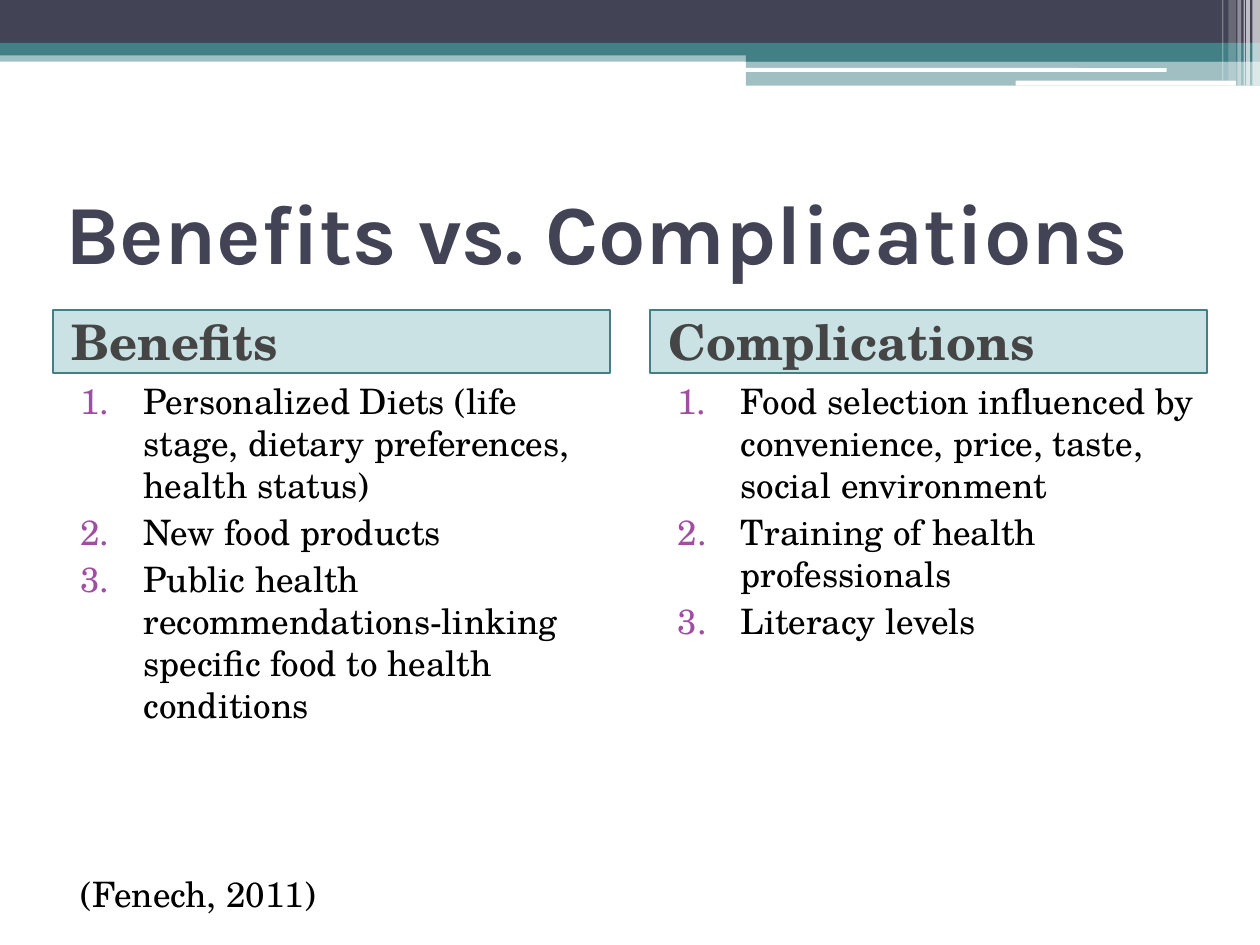
from typing import NamedTuple

from lxml.etree import SubElement
from pptx import Presentation
from pptx.dml.color import RGBColor
from pptx.enum.shapes import MSO_SHAPE
from pptx.enum.text import MSO_ANCHOR
from pptx.oxml.ns import qn
from pptx.util import Inches, Pt

COLORS = {
    "navy": "424456",
    "teal": "438086",
    "heading fill": "328E97",
    "heading text": "454545",
    "number": "A04DA3",
    "white": "FFFFFF",
    "black": "000000",
}
TITLE_FONT = "Karla"
BODY_FONT = "TeX Gyre Schola"
COLUMN_WIDTH = 4.42


class Band(NamedTuple):
    left: float
    top: float
    width: float
    height: float
    color: str
    opacity: int = 100
    rounded: bool = False


class Column(NamedTuple):
    left: float
    heading: str
    items: list[str]
    citation: str = ""


BANDS = [
    Band(0, 0.4, 10, 0.09, "teal", 50),
    Band(0, 0, 10, 0.34, "navy"),
    Band(0, 0.34, 10, 0.1, "teal"),
    Band(5.92, 0.39, 4.08, 0.1, "teal"),
    Band(5.92, 0.48, 4.08, 0.2, "teal", 50),
    Band(5.91, 0.54, 3.35, 0.03, "white", rounded=True),
    Band(8.06, 0.64, 1.75, 0.04, "white", rounded=True),
    Band(9.94, 0, 0.06, 0.68, "white", 65),
    Band(9.89, 0, 0.03, 0.68, "white", 65),
    Band(9.87, 0, 0.01, 0.68, "white", 60),
    Band(9.82, 0, 0.03, 0.68, "white", 40),
    Band(9.75, 0, 0.06, 0.64, "white", 20),
    Band(9.7, 0, 0.01, 0.64, "white", 30),
]

COLUMNS = [
    Column(
        0.42,
        "Benefits",
        [
            "Personalized Diets (life stage, dietary preferences, health status)",
            "New food products",
            "Public health recommendations-linking specific food to health conditions",
        ],
        "(Fenech, 2011)",
    ),
    Column(
        5.16,
        "Complications",
        [
            "Food selection influenced by convenience, price, taste, social environment",
            "Training of health professionals",
            "Literacy levels",
        ],
    ),
]


def rgb(name: str) -> RGBColor:
    return RGBColor.from_string(COLORS[name])


def draw_band(page, band: Band):
    kind = MSO_SHAPE.ROUNDED_RECTANGLE if band.rounded else MSO_SHAPE.RECTANGLE
    shape = page.shapes.add_shape(
        kind, Inches(band.left), Inches(band.top), Inches(band.width), Inches(band.height)
    )
    shape.shadow.inherit = False
    shape.line.fill.background()
    shape.fill.solid()
    shape.fill.fore_color.rgb = rgb(band.color)
    if band.opacity < 100:
        color = shape.fill._xPr.find(qn("a:solidFill"))[0]
        SubElement(color, qn("a:alpha"), val=str(band.opacity * 1000))
    return shape


def add_box(page, left: float, top: float, width: float, height: float):
    box = page.shapes.add_textbox(Inches(left), Inches(top), Inches(width), Inches(height))
    box.text_frame.word_wrap = True
    return box.text_frame


def add_span(para, text: str, font: str, size: int, color: str, bold: bool = False) -> None:
    span = para.add_run()
    span.text = text
    span.font.name = font
    span.font.size = Pt(size)
    span.font.bold = bold
    span.font.color.rgb = rgb(color)


def set_indent(para, margin: float, indent: float = 0):
    properties = para._p.get_or_add_pPr()
    properties.set("marL", str(Inches(margin)))
    properties.set("indent", str(Inches(indent)))
    properties.set("algn", "l")
    return properties


def number_paragraph(para) -> None:
    properties = set_indent(para, 0.62, -0.5)
    color = SubElement(properties, qn("a:buClr"))
    SubElement(color, qn("a:srgbClr"), val=COLORS["number"])
    SubElement(properties, qn("a:buFont"), typeface="+mj-lt")
    SubElement(properties, qn("a:buAutoNum"), type="arabicPeriod")


def draw_heading(page, column: Column) -> None:
    heading = draw_band(page, Band(column.left, 2.46, COLUMN_WIDTH, 0.5, "heading fill", 25))
    heading.line.color.rgb = rgb("teal")
    heading.line.width = Pt(1)
    frame = heading.text_frame
    frame.word_wrap = True
    frame.vertical_anchor = MSO_ANCHOR.MIDDLE
    para = frame.paragraphs[0]
    para.space_before = Pt(3)
    set_indent(para, 0.05)
    add_span(para, column.heading, BODY_FONT, 28, "heading text", bold=True)


def draw_list(page, column: Column) -> None:
    frame = add_box(page, column.left, 2.96, COLUMN_WIDTH, 4.25)
    for index, item in enumerate(column.items):
        para = frame.add_paragraph() if index else frame.paragraphs[0]
        para.space_before = Pt(3)
        number_paragraph(para)
        add_span(para, item, BODY_FONT, 20, "black")
    if column.citation:
        para = frame.add_paragraph()
        para.space_before = Pt(84)
        set_indent(para, 0.62, -0.5)
        add_span(para, column.citation, BODY_FONT, 20, "black")


def main() -> None:
    deck = Presentation()
    deck.slide_width = Inches(10)
    deck.slide_height = Inches(7.5)
    page = deck.slides.add_slide(deck.slide_layouts[6])
    for band in BANDS:
        shape = draw_band(page, band)
        if band.rounded:
            shape.adjustments[0] = 0.17
    title = add_box(page, 0.42, 1.25, 9.17, 1.17)
    title.vertical_anchor = MSO_ANCHOR.MIDDLE
    add_span(title.paragraphs[0], "Benefits vs. Complications", TITLE_FONT, 48, "navy", bold=True)
    for column in COLUMNS:
        draw_heading(page, column)
        draw_list(page, column)
    deck.save("out.pptx")


if __name__ == "__main__":
    main()
